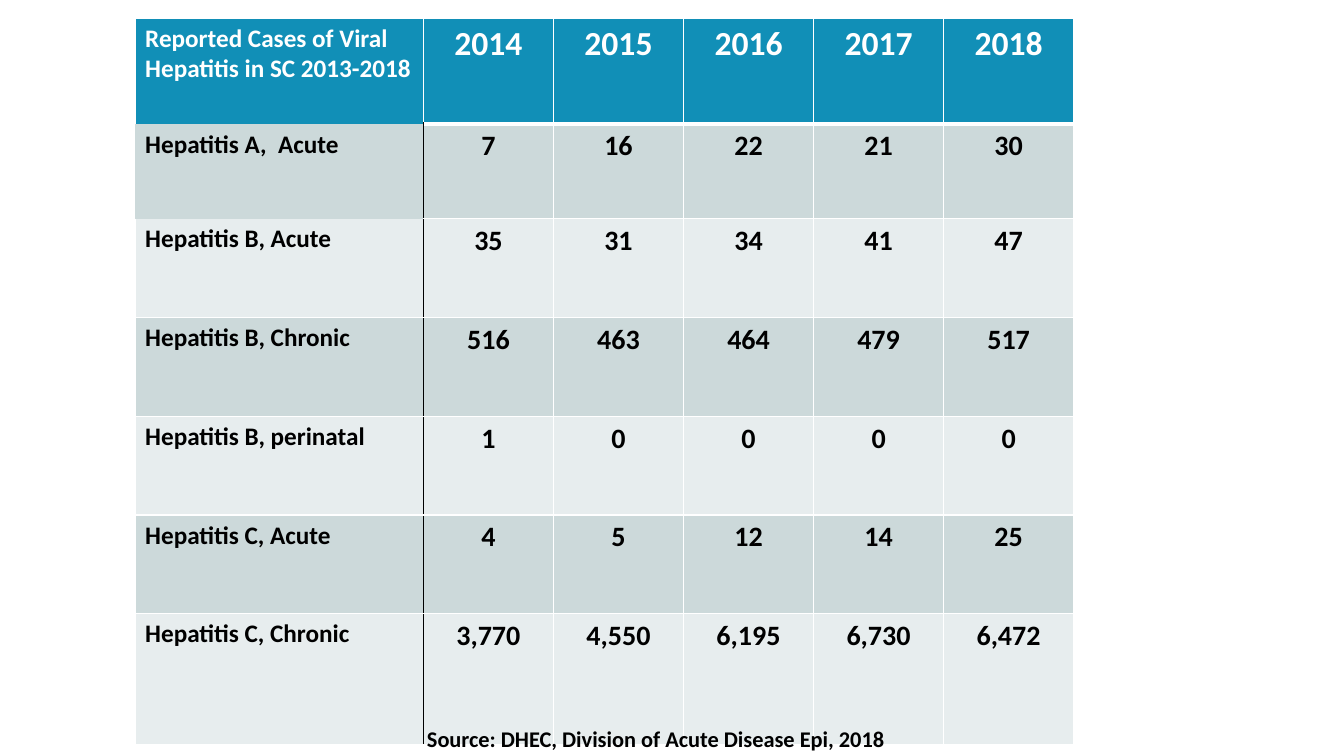
from lxml import etree
from pptx import Presentation
from pptx import util as u
from pptx.dml.color import RGBColor
from pptx.enum import text
from pptx.oxml.ns import qn

FONT = "Calibri"
WHITE, BLACK, HEADER = "FFFFFF", "000000", "118FB7"
BANDS = ["CCD9DA", "E7EDEE"]
COLUMN_WIDTHS = [2.86] + [1.29] * 5
ROW_HEIGHTS = [1.05, 0.94] + [0.98] * 4 + [1.3]
CASES = [
    ["Reported Cases of Viral Hepatitis in SC 2013-2018", "2014", "2015", "2016", "2017", "2018"],
    ["Hepatitis A,  Acute", "7", "16", "22", "21", "30"],
    ["Hepatitis B, Acute", "35", "31", "34", "41", "47"],
    ["Hepatitis B, Chronic", "516", "463", "464", "479", "517"],
    ["Hepatitis B, perinatal", "1", "0", "0", "0", "0"],
    ["Hepatitis C, Acute", "4", "5", "12", "14", "25"],
    ["Hepatitis C, Chronic", "3,770", "4,550", "6,195", "6,730", "6,472"],
]


def rgb(value):
    return RGBColor.from_string(value)


def format_paragraph(para, size, color, align):
    para.alignment = align
    para.font.name = FONT
    para.font.size = u.Pt(size)
    para.font.bold = True
    para.font.color.rgb = rgb(color)


def add_border(cell, side, color, points):
    properties = cell._tc.get_or_add_tcPr()
    line = etree.SubElement(properties, qn(f"a:ln{side}"), w=str(u.Pt(points)))
    if points:
        fill = etree.SubElement(line, qn("a:solidFill"))
        etree.SubElement(fill, qn("a:srgbClr"), val=color)
    else:
        etree.SubElement(line, qn("a:noFill"))


def border_styles(row, column):
    styles = {side: (WHITE, 1) for side in "LRTB"}
    if row == 0:
        styles["B"] = (WHITE, 3 if column else 0)
    elif column == 0:
        styles["R"] = (BLACK, 1)
    elif column == 1:
        styles["L"] = (BLACK, 1)
    if row == 1:
        styles["T"] = (WHITE, 3 if column else 0)
    if (row, column) == (1, 0):
        styles["B"] = styles["L"] = (WHITE, 0)
    if (row, column) == (2, 0):
        styles["T"] = (WHITE, 0)
    return styles


def fill_cell(cell, row, column):
    for side, (color, points) in border_styles(row, column).items():
        add_border(cell, side, color, points)
    cell.fill.solid()
    cell.fill.fore_color.rgb = rgb(BANDS[(row - 1) % 2] if row else HEADER)
    cell.text = CASES[row][column]
    if column == 0:
        size, align = 18, text.PP_ALIGN.LEFT
    else:
        size, align = 20 if row else 24, text.PP_ALIGN.CENTER
    format_paragraph(cell.text_frame.paragraphs[0], size, BLACK if row else WHITE, align)


def add_case_table(page, left, top, width, height):
    box = [u.Inches(length) for length in (left, top, width, height)]
    table = page.shapes.add_table(len(CASES), len(CASES[0]), *box).table
    for column, column_width in zip(table.columns, COLUMN_WIDTHS):
        column.width = u.Inches(column_width)
    for row, row_height in zip(table.rows, ROW_HEIGHTS):
        row.height = u.Inches(row_height)
    for row in range(len(CASES)):
        for column in range(len(CASES[0])):
            fill_cell(table.cell(row, column), row, column)


def add_source_line(page, left, top, width, height):
    box = page.shapes.add_textbox(*[u.Inches(length) for length in (left, top, width, height)])
    frame = box.text_frame
    frame.word_wrap = True
    frame.auto_size = text.MSO_AUTO_SIZE.SHAPE_TO_FIT_TEXT
    para = frame.paragraphs[0]
    para.text = "Source: DHEC, Division of Acute Disease Epi, 2018"
    para.line_spacing = 1.5
    format_paragraph(para, 16, BLACK, text.PP_ALIGN.CENTER)


def main():
    deck = Presentation()
    deck.slide_width = u.Inches(13.33)
    deck.slide_height = u.Inches(7.5)
    page = deck.slides.add_slide(deck.slide_layouts[6])
    add_case_table(page, 1.34, 0.18, sum(COLUMN_WIDTHS), sum(ROW_HEIGHTS))
    add_source_line(page, 1.67, 7.01, 9.67, 0.5)
    deck.save("out.pptx")


if __name__ == "__main__":
    main()
